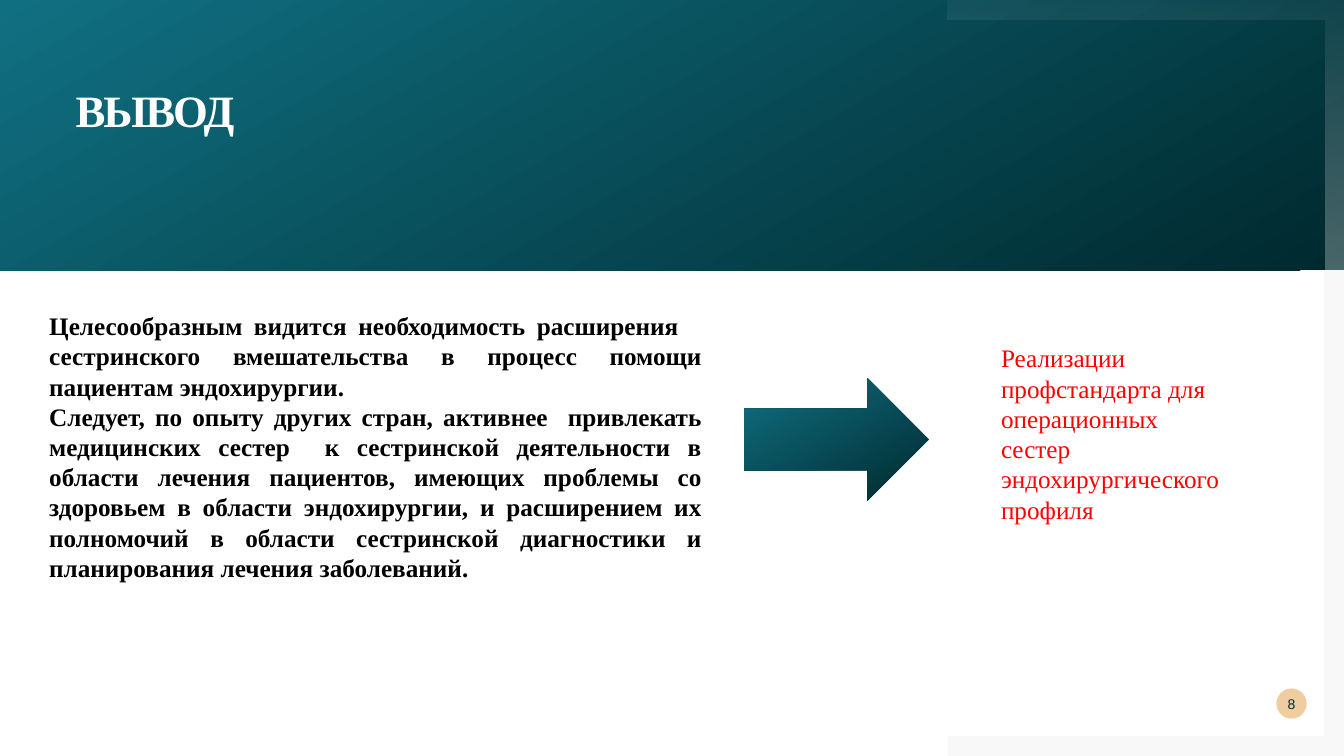
from lxml import etree
from pptx import Presentation
from pptx.dml.color import RGBColor
from pptx.enum.shapes import MSO_SHAPE as Shape
from pptx.enum.text import MSO_ANCHOR as Anchor, PP_ALIGN as Align
from pptx.oxml.ns import qn
from pptx.util import Pt

PX = 9144  # 100 px to the inch
WIDTH, HEIGHT = 1333, 750
BAND_HEIGHT, EDGE, FRAME_LEFT = 268, 20, 940
SERIF = "Times New Roman"
COLORS = {
    "dark": "00292E", "teal": "107082", "white": "FFFFFF", "gray": "808080",
    "sand": "F0CDA1", "black": "000000", "red": "FF0000",
}
CONCLUSIONS = [
    "Целесообразным видится необходимость расширения   сестринского "
    "вмешательства в процесс помощи пациентам эндохирургии.",
    "Следует, по опыту других стран, активнее  привлекать медицинских сестер  "
    "к сестринской деятельности в области лечения пациентов, имеющих проблемы "
    "со здоровьем в области эндохирургии, и расширением их полномочий в области "
    "сестринской диагностики и планирования лечения заболеваний.",
]
RESULT = "Реализации профстандарта для операционных сестер эндохирургического профиля"


def rgb(name):
    return RGBColor.from_string(COLORS[name])


def set_opacity(shape, percents):
    """Give each fill colour of the shape its opacity, in order."""
    colors = shape._element.spPr.iter(qn("a:srgbClr"))
    for color, percent in zip(list(colors), percents):
        etree.SubElement(color, qn("a:alpha"), val=str(percent * 1000))


def fill_solid(shape, color):
    shape.fill.solid()
    shape.fill.fore_color.rgb = rgb(color)


def fill_gradient(shape, first, last, angle):
    shape.fill.gradient()
    shape.fill.gradient_angle = angle
    for stop, color, position in zip(shape.fill.gradient_stops, (first, last), (0, 1)):
        stop.color.rgb = rgb(color)
        stop.position = position


def make_plain(shape):
    shape.shadow.inherit = False
    shape.line.fill.background()
    return shape


def add_preset(slide, kind, *box):
    return make_plain(slide.shapes.add_shape(kind, *(value * PX for value in box)))


def add_outline(slide, points):
    builder = slide.shapes.build_freeform(*points[0], scale=PX)
    builder.add_line_segments(points[1:], close=True)
    return make_plain(builder.convert_to_shape())


def write(shape, paragraphs, size, color, font=SERIF, bold=False, align=Align.LEFT):
    frame = shape.text_frame
    frame.word_wrap = True
    frame.text = "\n".join(paragraphs)
    for paragraph in frame.paragraphs:
        paragraph.alignment = align
        for run in paragraph.runs:
            run.font.name, run.font.size, run.font.bold = font, Pt(size), bold
            run.font.color.rgb = rgb(color)
    return frame


def add_text(slide, box, paragraphs, size, color, **style):
    shape = slide.shapes.add_textbox(*(value * PX for value in box))
    return write(shape, paragraphs, size, color, **style)


def clear_margins(frame):
    frame.margin_left = frame.margin_right = 0
    frame.margin_top = frame.margin_bottom = 0


def add_background(slide):
    inner_right, inner_bottom = WIDTH - EDGE, HEIGHT - EDGE

    # Pale corner frame at the bottom right
    corner = add_outline(slide, [
        (inner_right, BAND_HEIGHT), (WIDTH, BAND_HEIGHT), (WIDTH, HEIGHT),
        (FRAME_LEFT, HEIGHT), (FRAME_LEFT, inner_bottom), (inner_right, inner_bottom)])
    fill_solid(corner, "gray")
    set_opacity(corner, [5])

    # Title band
    band = add_preset(slide, Shape.RECTANGLE, 0, 0, WIDTH, BAND_HEIGHT)
    fill_gradient(band, "dark", "teal", 120)

    # Translucent corner frame over the band
    corner = add_outline(slide, [
        (FRAME_LEFT, 0), (WIDTH, 0), (WIDTH, BAND_HEIGHT),
        (inner_right, BAND_HEIGHT), (inner_right, EDGE), (FRAME_LEFT, EDGE)])
    fill_gradient(corner, "white", "white", 270)
    set_opacity(corner, [5, 30])


def add_title(slide, text):
    frame = add_text(slide, (75, 88, 827, 40), [text], 32, "white", bold=True)
    clear_margins(frame)
    paragraph = frame.paragraphs[0]
    paragraph.line_spacing = 0.9
    paragraph.runs[0].font._element.set("spc", "-150")


def add_page_number(slide, number):
    badge = add_preset(slide, Shape.OVAL, 1266, 683, 30, 30)
    fill_solid(badge, "sand")
    frame = write(badge, [number], 10, "dark", font="Arial", align=Align.CENTER)
    clear_margins(frame)
    frame.vertical_anchor = Anchor.MIDDLE


def main():
    presentation = Presentation()
    presentation.slide_width, presentation.slide_height = WIDTH * PX, HEIGHT * PX
    slide = presentation.slides.add_slide(presentation.slide_layouts[6])

    add_background(slide)
    add_title(slide, "ВЫВОД")
    add_page_number(slide, "8")

    # Conclusions lead to the result
    add_text(slide, (39, 303, 667, 283), CONCLUSIONS, 18, "black",
             bold=True, align=Align.JUSTIFY)
    arrow = add_preset(slide, Shape.RIGHT_ARROW, 738, 375, 183, 122)
    fill_gradient(arrow, "dark", "teal", 120)
    add_text(slide, (983, 335, 239, 222), [RESULT], 18, "red")

    presentation.save("out.pptx")


if __name__ == "__main__":
    main()
